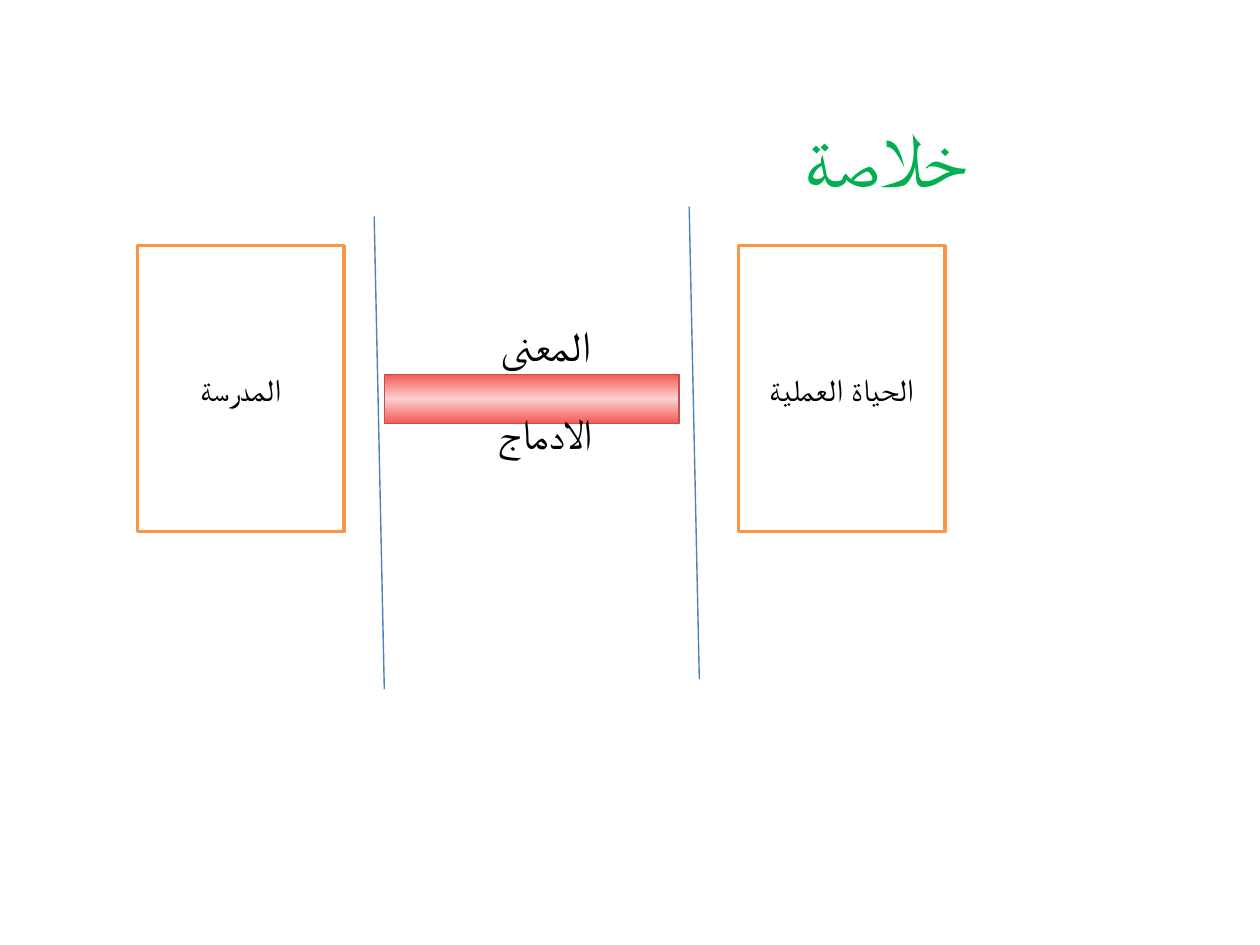
from copy import deepcopy
from dataclasses import dataclass

from pptx import Presentation
from pptx.dml.color import RGBColor
from pptx.enum.shapes import MSO_CONNECTOR, MSO_SHAPE
from pptx.enum.text import MSO_ANCHOR, PP_ALIGN
from pptx.oxml.ns import qn
from pptx.util import Inches, Pt


@dataclass(frozen=True)
class Theme:
    font: str = "Arial"
    title_size: int = 44
    label_size: int = 24
    box_size: int = 18
    title: str = "00B050"
    text: str = "000000"
    box_fill: str = "FFFFFF"
    box_line: str = "F79646"
    divider: str = "4F81BD"
    bar_edge: str = "F55955"
    bar_middle: str = "FBD1CF"
    bar_line: str = "C0504D"
    box_width: float = 2
    thin_width: float = 0.79


class SlideBuilder:
    def __init__(self, slide, theme):
        self.slide = slide
        self.theme = theme

    def set_text(self, shape, lines, size, color, anchor=MSO_ANCHOR.MIDDLE, gap=0):
        """Fill a shape with centred right-to-left paragraphs."""
        frame = shape.text_frame
        frame.word_wrap = True
        frame.vertical_anchor = anchor
        frame.text = "\n".join(lines)
        font_format = {"name": self.theme.font, "size": Pt(size)}
        for index, paragraph in enumerate(frame.paragraphs):
            paragraph.alignment = PP_ALIGN.CENTER
            paragraph.space_before = Pt(gap if index else 0)
            paragraph._p.get_or_add_pPr().set("rtl", "1")
            font = paragraph.runs[0].font
            for name, value in font_format.items():
                setattr(font, name, value)
            font.color.rgb = RGBColor.from_string(color)
            # Arabic letters take the complex-script font
            script_font = font._element.makeelement(
                qn("a:cs"), {"typeface": self.theme.font})
            font._element.append(script_font)

    def outline(self, shape, color, width):
        shape.line.color.rgb = RGBColor.from_string(color)
        shape.line.width = Pt(width)

    def title(self, text, left, top, width, height):
        shape = self.slide.shapes.title
        position = {"left": left, "top": top, "width": width, "height": height}
        for name, value in position.items():
            setattr(shape, name, Inches(value))
        self.set_text(shape, [text], self.theme.title_size, self.theme.title)

    def rectangle(self, left, top, width, height):
        shape = self.slide.shapes.add_shape(
            MSO_SHAPE.RECTANGLE, Inches(left), Inches(top), Inches(width), Inches(height))
        shape.shadow.inherit = False
        return shape

    def box(self, text, left, top, width, height):
        shape = self.rectangle(left, top, width, height)
        shape.fill.solid()
        shape.fill.fore_color.rgb = RGBColor.from_string(self.theme.box_fill)
        self.outline(shape, self.theme.box_line, self.theme.box_width)
        self.set_text(shape, [text], self.theme.box_size, self.theme.text)

    def gradient_bar(self, left, top, width, height):
        shape = self.rectangle(left, top, width, height)
        shape.fill.gradient()
        shape.fill.gradient_angle = 90
        # The preset gradient has two stops; a third makes it symmetric
        stop_list = shape._element.spPr.find(".//" + qn("a:gsLst"))
        stop_list.append(deepcopy(stop_list[0]))
        colors = (self.theme.bar_edge, self.theme.bar_middle, self.theme.bar_edge)
        for index, (stop, color) in enumerate(zip(shape.fill.gradient_stops, colors)):
            stop.position = index / 2
            stop.color.rgb = RGBColor.from_string(color)
        self.outline(shape, self.theme.bar_line, self.theme.thin_width)

    def divider(self, left, top, lean, height):
        connector = self.slide.shapes.add_connector(
            MSO_CONNECTOR.STRAIGHT, Inches(left), Inches(top),
            Inches(left + lean), Inches(top + height))
        self.outline(connector, self.theme.divider, self.theme.thin_width)
        properties = connector._element.spPr
        properties.append(properties.makeelement(qn("a:effectLst"), {}))

    def label(self, lines, left, top, width, height, gap):
        shape = self.slide.shapes.add_textbox(
            Inches(left), Inches(top), Inches(width), Inches(height))
        self.set_text(shape, lines, self.theme.label_size, self.theme.text,
                      MSO_ANCHOR.TOP, gap)


def main():
    presentation = Presentation()
    presentation.slide_width = Inches(10)
    presentation.slide_height = Inches(7.5)
    title_only = presentation.slide_layouts[5]
    builder = SlideBuilder(presentation.slides.add_slide(title_only), Theme())

    builder.title("خلاصة", 5.7, 0.62, 2.66, 1.25)

    # School on the left, bridge to working life on the right
    box_top, box_width, box_height = 1.95, 1.64, 2.27
    builder.box("المدرسة", 1.09, box_top, box_width, box_height)
    builder.gradient_bar(3.05, 2.97, 2.34, 0.39)

    # Slightly leaning dividers
    for left, top in ((5.47, 1.64), (2.97, 1.72)):
        builder.divider(left, top, lean=0.08, height=3.75)

    builder.box("الحياة العملية", 5.86, box_top, box_width, box_height)

    # Words above and below the bar
    builder.label(["المعنى", "الادماج"], 3.11, 2.49, 2.44, 1.3, gap=21)

    presentation.save("out.pptx")


if __name__ == "__main__":
    main()
